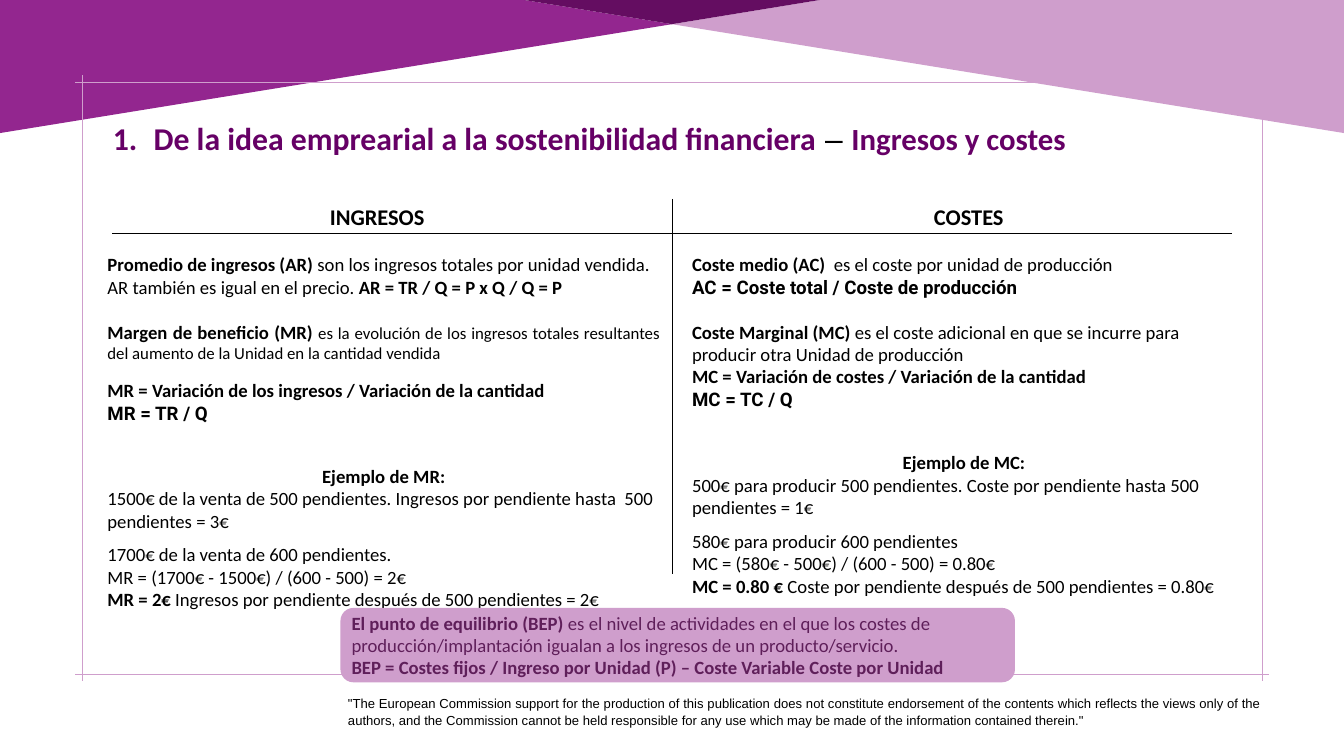
from dataclasses import dataclass, field
from pptx import Presentation
from pptx.dml.color import RGBColor
from pptx.enum.shapes import MSO_CONNECTOR, MSO_SHAPE
from pptx.enum.text import MSO_ANCHOR, MSO_AUTO_SIZE, PP_ALIGN
from pptx.oxml.ns import qn
from pptx.util import Inches, Pt
from lxml.etree import SubElement

COLS, ROWS = 20, 11.25
MID = COLS / 2
LEFT, CENTER, JUSTIFY = PP_ALIGN.LEFT, PP_ALIGN.CENTER, PP_ALIGN.JUSTIFY


@dataclass(frozen=True)
class Theme:
    """Colours, fonts and type sizes of the slide."""
    purple: str = "93268F"
    lilac: str = "CF9ECC"
    dark: str = "640D61"
    title: str = "660066"
    plum: str = "5F1F5A"
    ink: str = "000000"
    font: str = "Calibri"
    formula_font: str = "Roboto"
    note_font: str = "Arial"
    title_pt: int = 34
    title_end_pt: int = 33
    head_pt: int = 24
    body_pt: int = 20
    small_pt: int = 18
    note_pt: int = 14
    hairline: float = 0.75


T = Theme()


@dataclass
class Run:
    """A stretch of text in one style."""
    text: str
    bold: bool = False
    size: int = T.body_pt
    font: str = T.font
    color: str = T.ink


@dataclass
class Para:
    """A paragraph with its alignment and the points of space before it."""
    runs: list = field(default_factory=list)
    align: PP_ALIGN = LEFT
    before: int = 0


def plain(text, **style):
    """Return a regular run."""
    return Run(text, **style)


def bold(text, **style):
    """Return a bold run."""
    return Run(text, bold=True, **style)


def formula(text):
    """Return a bold run in the formula font."""
    return bold(text, font=T.formula_font)


def rgb(code):
    """Turn a hex code into a colour."""
    return RGBColor.from_string(code)


def grid(*cells):
    """Convert grid cells to slide lengths."""
    return [Inches(c) for c in cells]


def fill_text(tf, paras, anchor=MSO_ANCHOR.TOP):
    """Write paragraphs into a text frame run by run."""
    tf.word_wrap = True
    tf.auto_size = MSO_AUTO_SIZE.NONE
    tf.vertical_anchor = anchor
    for i, para in enumerate(paras):
        p = tf.add_paragraph() if i else tf.paragraphs[0]
        p.alignment = para.align
        p.space_before = Pt(para.before)
        for run in para.runs:
            r = p.add_run()
            r.text = run.text
            r.font.name, r.font.size, r.font.bold = run.font, Pt(run.size), run.bold
            r.font.color.rgb = rgb(run.color)


def add_text(s, cells, paras):
    """Add a text box and return its text frame."""
    tf = s.shapes.add_textbox(*grid(*cells)).text_frame
    fill_text(tf, paras)
    return tf


def add_polygon(s, points, color):
    """Add a filled polygon without an outline."""
    first, *rest = [grid(*pt) for pt in points]
    fb = s.shapes.build_freeform(*first)
    fb.add_line_segments(rest)
    sp = fb.convert_to_shape()
    sp.shadow.inherit = False
    sp.fill.solid()
    sp.fill.fore_color.rgb = rgb(color)
    sp.line.fill.background()


def add_line(s, cells, color):
    """Add a hairline between two grid points."""
    ln = s.shapes.add_connector(MSO_CONNECTOR.STRAIGHT, *grid(*cells))
    ln.line.width = Pt(T.hairline)
    ln.line.color.rgb = rgb(color)
    SubElement(ln._element.spPr, qn("a:effectLst"))


def add_banner(s):
    """Add the mirrored bands at the top and their overlap."""
    inner, low, cross = 7.8, 1.98, (MID, 0.36)
    band = [(0, low), (0, 0), (inner, 0), cross]
    add_polygon(s, band, T.purple)
    add_polygon(s, [(COLS - x, y) for x, y in band], T.lilac)
    add_polygon(s, [cross, (inner, 0), (COLS - inner, 0)], T.dark)


def add_frame(s):
    """Add the four lines that cross at the corners."""
    edge, tip = 1.22, 1.12
    for y in (edge, ROWS - edge):
        add_line(s, (tip, y, COLS - tip, y), T.lilac)
    for x in (edge, COLS - edge):
        add_line(s, (x, tip, x, ROWS - tip), T.lilac)


def add_title(s):
    """Place and write the title placeholder."""
    sp = s.shapes.title
    sp.left, sp.top, sp.width, sp.height = grid(1.58, 1.72, 14.45, 1.23)
    fill_text(sp.text_frame, [Para([
        bold("1.\t De la idea emprearial a la sostenibilidad financiera",
             size=T.title_pt, color=T.title),
        plain(" – ", size=T.title_pt, font=T.note_font),
        bold("Ingresos y costes", size=T.title_end_pt, color=T.title)])])


def add_heading(s, text, cells):
    """Add a column heading."""
    add_text(s, cells, [Para([bold(text, size=T.head_pt)])])


def add_callout(s, cells, paras):
    """Add the rounded box with the break-even rule."""
    sp = s.shapes.add_shape(MSO_SHAPE.ROUNDED_RECTANGLE, *grid(*cells))
    sp.shadow.inherit = False
    sp.fill.solid()
    sp.fill.fore_color.rgb = sp.line.color.rgb = rgb(T.lilac)
    sp.line.width = Pt(2)
    fill_text(sp.text_frame, paras, MSO_ANCHOR.MIDDLE)


def add_disclaimer(s):
    """Add the justified note at the foot."""
    tf = add_text(s, (5.08, 10.29, 13.79, 0.52), [Para([plain(
        '"The European Commission support for the production of this publication does not constitute endorsement of the contents which reflects the views only of the authors, and the Commission cannot be held responsible for any use which may be made of the information contained therein."',
        size=T.note_pt, font=T.note_font)], JUSTIFY)])
    tf.paragraphs[0].line_spacing = 1.07


COSTS = [
    Para([bold("Coste medio (AC) "), plain(" es el coste por unidad de producción")]),
    Para([formula("AC = Coste total / Coste de producción")]),
    Para([bold("Coste Marginal (MC) "), plain("es el coste adicional en que se incurre para producir otra Unidad de producción")], before=24),
    Para([bold("MC = Variación de costes / Variación de la cantidad")]),
    Para([formula("MC = TC / Q")]),
    Para([bold("Ejemplo de MC:")], CENTER, 44),
    Para([plain("500€ para producir 500 pendientes. Coste por pendiente hasta 500 pendientes = 1€")]),
    Para([plain("580€ para producir 600 pendientes")], JUSTIFY, 12),
    Para([plain("MC = (580€ - 500€) / (600 - 500) = 0.80€")], JUSTIFY),
    Para([bold("MC = 0.80 € "), plain("Coste por pendiente después de 500 pendientes = 0.80€")], JUSTIFY),
]
INCOME = [
    Para([bold("Promedio de ingresos (AR) "), plain("son los ingresos totales por unidad vendida. AR también es igual en el precio. "), bold("AR = TR / Q = P x Q / Q = P")]),
    Para([bold("Margen de beneficio (MR) "), plain("es la evolución de los ingresos totales resultantes del aumento de la Unidad en la cantidad vendida", size=T.small_pt)], JUSTIFY, 24),
    Para([bold("MR = Variación de los ingresos / Variación de la cantidad")], JUSTIFY, 17),
    Para([formula("MR = TR / Q")], JUSTIFY),
    Para([bold("Ejemplo de MR:")], CENTER, 44),
    Para([plain("1500€ de la venta de 500 pendientes. Ingresos por pendiente hasta  500 pendientes = 3€")]),
    Para([plain("1700€ de la venta de 600 pendientes.")], before=12),
    Para([plain("MR = (1700€ - 1500€) / (600 - 500) = 2€")]),
    Para([bold("MR = 2€"), plain(" Ingresos por pendiente después de 500 pendientes = 2€")]),
]
BREAK_EVEN = [
    Para([bold("El punto de equilibrio (BEP) ", color=T.plum), plain("es el nivel de actividades en el que los costes de producción/implantación igualan a los ingresos de un producto/servicio.", color=T.plum)]),
    Para([bold("BEP = Costes fijos / Ingreso por Unidad (P) – Coste Variable Coste por Unidad", color=T.plum)]),
]


def main():
    """Build the slide and save it."""
    prs = Presentation()
    prs.slide_width, prs.slide_height = grid(COLS, ROWS)
    s = prs.slides.add_slide(prs.slide_layouts[5])
    add_banner(s)
    add_frame(s)
    add_disclaimer(s)
    add_title(s)
    add_line(s, (1.67, 3.47, COLS - 1.67, 3.47), T.ink)
    add_heading(s, "INGRESOS", (4.81, 2.98, 1.83, 0.5))
    add_heading(s, "COSTES", (13.8, 2.97, 1.38, 0.5))
    add_text(s, (10.2, 3.72, 8.29, 6.16), COSTS)
    add_text(s, (1.5, 3.72, 8.42, 5.45), INCOME)
    add_callout(s, (5.08, 9.06, 10.01, 1.08), BREAK_EVEN)
    add_line(s, (MID, 2.96, MID, 8.54), T.ink)
    prs.save("out.pptx")


if __name__ == "__main__":
    main()
